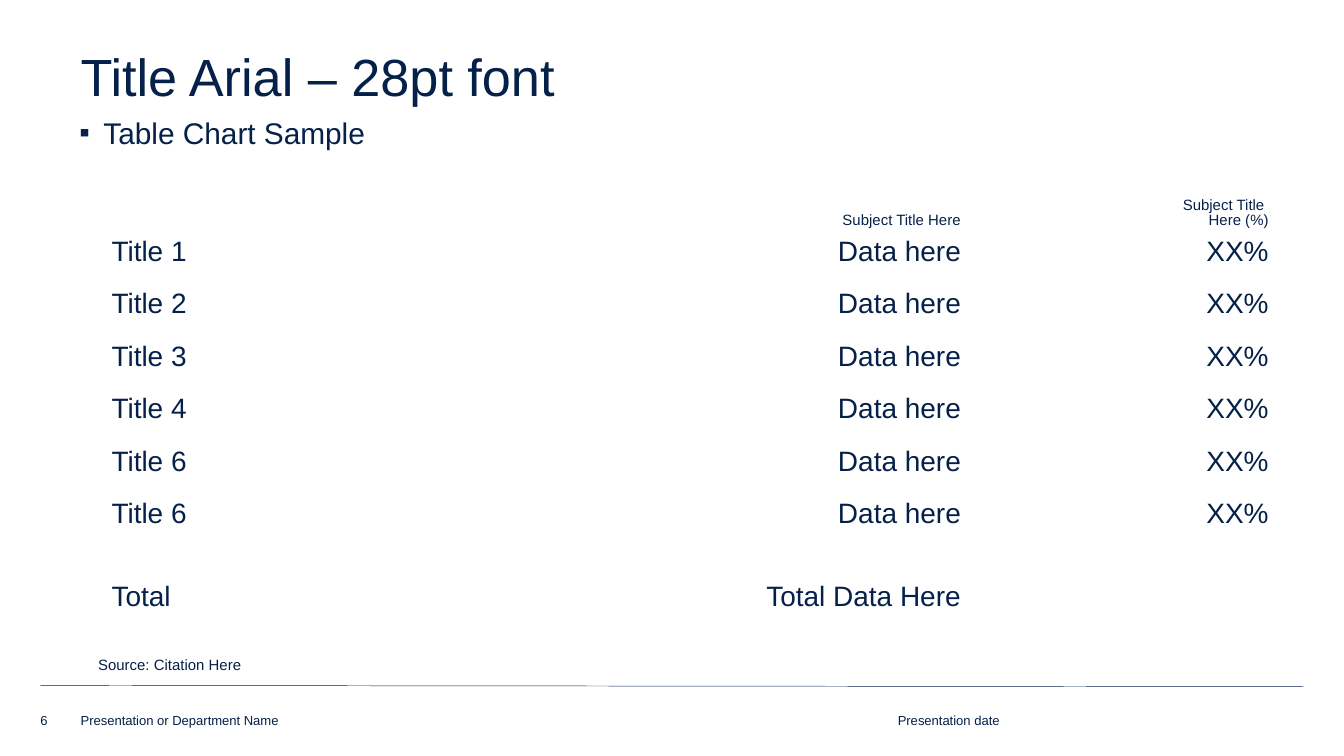
import dataclasses

import pptx
import pptx.dml.color
import pptx.enum.shapes
import pptx.enum.text
import pptx.oxml
import pptx.oxml.ns
import pptx.util

Inches, Pt = pptx.util.Inches, pptx.util.Pt
ALIGN, ANCHOR = pptx.enum.text.PP_ALIGN, pptx.enum.text.MSO_ANCHOR
AUTO_SIZE = pptx.enum.text.MSO_AUTO_SIZE


@dataclasses.dataclass(frozen=True)
class Theme:
    font: str = "Arial"
    ink: str = "052049"
    title: float = 28
    body: float = 16
    cell: float = 15
    small: float = 8
    footer: float = 7


THEME = Theme()


def ink():
    return pptx.dml.color.RGBColor.from_string(THEME.ink)


def write(p, text, size, spacing=None, align=ALIGN.LEFT):
    p.alignment = align
    if spacing:
        p.line_spacing = spacing
    for i, line in enumerate(text.split("\n")):
        if i:
            p.add_line_break()
        r = p.add_run()
        r.text = line
        r.font.name, r.font.size = THEME.font, Pt(size)
        r.font.color.rgb = ink()


def place(sp, box):
    sp.left, sp.top, sp.width, sp.height = (Inches(v) for v in box)


def add_bullet(p, char, indent):
    pPr = p._p.get_or_add_pPr()
    pPr.set("marL", str(Inches(indent)))
    pPr.set("indent", str(-Inches(indent)))
    ns = pptx.oxml.ns.nsdecls("a")
    for xml in (f'<a:buClr {ns}><a:srgbClr val="{THEME.ink}"/></a:buClr>',
                f'<a:buFont {ns} typeface="{THEME.font}"/>',
                f'<a:buChar {ns} char="{char}"/>'):
        pPr.append(pptx.oxml.parse_xml(xml))


def fill_title(s, box, text):
    sp = s.shapes.title
    place(sp, box)
    tf = sp.text_frame
    tf.auto_size = AUTO_SIZE.SHAPE_TO_FIT_TEXT
    tf.vertical_anchor = ANCHOR.MIDDLE
    write(tf.paragraphs[0], text, THEME.title, 0.85)


def fill_body(s, box, text):
    sp = s.placeholders[1]
    place(sp, box)
    tf = sp.text_frame
    tf.auto_size = AUTO_SIZE.NONE
    tf.vertical_anchor = ANCHOR.TOP
    p = tf.paragraphs[0]
    add_bullet(p, "▪", 0.18)
    p.space_before = Pt(0)
    write(p, text, THEME.body, 0.9)


def add_label(s, box, text, size, anchor=ANCHOR.TOP, spacing=None):
    sp = s.shapes.add_textbox(*(Inches(v) for v in box))
    tf = sp.text_frame
    tf.word_wrap = True
    tf.vertical_anchor = anchor
    tf.margin_left = tf.margin_top = tf.margin_right = tf.margin_bottom = 0
    write(tf.paragraphs[0], text, size, spacing)


def add_data_table(s, box, rows):
    left, top, width, height = box
    cols = (3.49, 3.03, 2.29)
    header_h, row_h = 0.41, 0.39
    total_h = height - header_h - row_h * (len(rows) - 2)
    heights = [header_h] + [row_h] * (len(rows) - 2) + [total_h]
    table = s.shapes.add_table(len(rows), len(cols), Inches(left), Inches(top),
                               Inches(width), Inches(height)).table
    table.first_row = table.horz_banding = False
    for col, w in zip(table.columns, cols):
        col.width = Inches(w)
    for i, (row, h) in enumerate(zip(rows, heights)):
        table.rows[i].height = Inches(h)
        header, total = i == 0, i == len(rows) - 1
        for j, text in enumerate(row):
            cell = table.cell(i, j)
            cell.fill.background()
            cell.margin_left = cell.margin_right = Inches(0.1)
            cell.margin_top = Inches(0.27 if total else 0.04)
            cell.margin_bottom = Inches(0.04)
            cell.vertical_anchor = ANCHOR.BOTTOM if header else ANCHOR.TOP
            if text:
                write(cell.text_frame.paragraphs[0], text,
                      THEME.small if header else THEME.cell, 0.9,
                      ALIGN.RIGHT if j else ALIGN.LEFT)


def add_footer(s, box, number, name, date):
    left, top, width, height = box
    rule = s.shapes.add_connector(pptx.enum.shapes.MSO_CONNECTOR.STRAIGHT,
                                  Inches(left), Inches(top),
                                  Inches(left + width), Inches(top + 0.01))
    rule.line.color.rgb = ink()
    rule.line.width = Pt(0.25)
    rule._element.spPr.append(pptx.oxml.parse_xml(
        f'<a:effectLst {pptx.oxml.ns.nsdecls("a")}/>'))
    h = 0.13
    for dx, w, text in ((0, 0.27, number), (0.3, 4.71, name), (6.38, 1.01, date)):
        add_label(s, (left + dx, top + height - h, w, h), text,
                  THEME.footer, ANCHOR.BOTTOM)


def main():
    prs = pptx.Presentation()
    prs.slide_width = Inches(10)
    prs.slide_height = prs.slide_width * 9 // 16
    s = prs.slides.add_slide(prs.slide_layouts[1])
    fill_title(s, (0.5, 0.35, 8.84, 0.5), "Title Arial – 28pt font")
    fill_body(s, (0.49, 0.83, 8.83, 0.31), "Table Chart Sample")
    rows = [("", "Subject Title Here", "Subject Title \nHere (%)")]
    rows += [(f"Title {n}", "Data here", "XX%") for n in (1, 2, 3, 4, 6, 6)]
    rows.append(("Total", "Total Data Here", ""))
    add_data_table(s, (0.73, 1.33, 8.81, 3.43), rows)
    add_label(s, (0.73, 4.89, 1.66, 0.12), "Source: Citation Here",
              THEME.small, spacing=0.9)
    add_footer(s, (0.3, 5.1, 9.4, 0.32), "6",
               "Presentation or Department Name", "Presentation date")
    prs.save("out.pptx")


if __name__ == "__main__":
    main()
